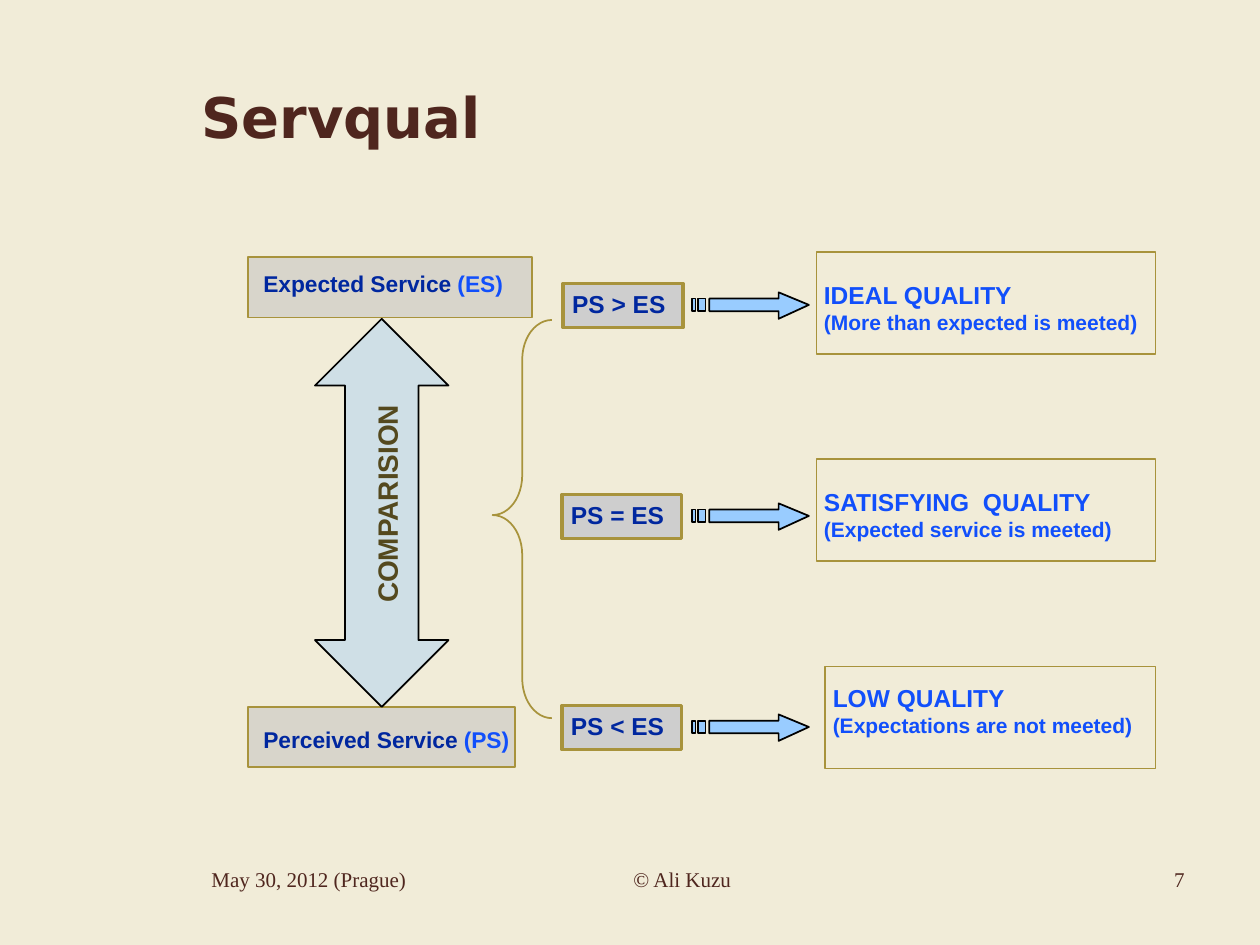
from lxml.etree import SubElement
from pptx import Presentation
from pptx.dml.color import RGBColor
from pptx.enum.shapes import MSO_SHAPE as Preset
from pptx.enum.text import MSO_ANCHOR as Anchor, PP_ALIGN as Align
from pptx.oxml.ns import qn
from pptx.util import Inches, Pt

COLORS = {
    "background": "F1ECD8",
    "brown": "4F261E",
    "olive": "54491E",
    "gold": "A8933C",
    "navy": "00279F",
    "blue": "114FFB",
    "silver": "C0C0C0",
    "gray": "CECECE",
    "sky": "99CCFF",
    "black": "000000",
}
FOOTER = {"name": "Times New Roman", "size": 12, "color": "brown"}
TITLE = {"name": "DejaVu Sans", "size": 32, "bold": True, "color": "brown"}
SERVICE = {"name": "Arial", "size": 13, "bold": True, "color": "navy"}
ABBREVIATION = {**SERVICE, "color": "blue"}
COMPARISON = {**SERVICE, "size": 16, "color": "olive"}
CONDITION = {**SERVICE, "size": 14}
OUTCOME = {**CONDITION, "color": "blue"}
DETAIL = {**OUTCOME, "size": 12}

DEFAULT_INSETS = (0.1, 0.05, 0.1, 0.05)
TIGHT_INSETS = (0.06, 0.03, 0.06, 0.03)
CONDITION_INSETS = (0.07, 0.04, 0.07, 0.04)

# Contours of a striped arrow, relative to its top left corner
ARROW_CONTOURS = [
    [(0.69, 0), (0.69, 0.05), (0.14, 0.05), (0.14, 0.15),
     (0.69, 0.15), (0.69, 0.21), (0.93, 0.1)],
    [(0.05, 0.05), (0.05, 0.15), (0.11, 0.15), (0.11, 0.05)],
    [(0, 0.05), (0, 0.15), (0.03, 0.15), (0.03, 0.05)],
]


def rgb(color):
    return RGBColor.from_string(COLORS[color])


class SlideBuilder:
    def __init__(self, slide):
        self.slide = slide
        slide.background.fill.solid()
        slide.background.fill.fore_color.rgb = rgb("background")

    def fill_text(self, shape, paragraphs, insets=DEFAULT_INSETS,
                  align=Align.LEFT, anchor=Anchor.TOP):
        """Fill a shape with paragraphs, each a list of (text, format) runs."""
        frame = shape.text_frame
        frame.word_wrap = True
        frame.vertical_anchor = anchor
        for side, inset in zip(("left", "top", "right", "bottom"), insets):
            setattr(frame, f"margin_{side}", Inches(inset))
        for index, runs in enumerate(paragraphs):
            paragraph = frame.add_paragraph() if index else frame.paragraphs[0]
            paragraph.alignment = align
            for text, style in runs:
                run = paragraph.add_run()
                run.text = text
                for attribute, value in style.items():
                    if attribute == "color":
                        run.font.color.rgb = rgb(value)
                    else:
                        setattr(run.font, attribute,
                                Pt(value) if attribute == "size" else value)

    def text(self, box, paragraphs, rotation=0, **layout):
        shape = self.slide.shapes.add_textbox(*map(Inches, box))
        shape.rotation = rotation
        self.fill_text(shape, paragraphs, **layout)

    def paint(self, shape, fill=None, opacity=100, line="gold", width=1):
        shape.shadow.inherit = False
        shape.line.color.rgb = rgb(line)
        shape.line.width = Pt(width)
        if fill is None:
            shape.fill.background()
            return
        shape.fill.solid()
        shape.fill.fore_color.rgb = rgb(fill)
        if opacity < 100:
            properties = shape.element.spPr
            color = properties.find(f"{qn('a:solidFill')}/{qn('a:srgbClr')}")
            SubElement(color, qn("a:alpha")).set("val", str(opacity * 1000))

    def shape(self, preset, box, adjustments=(), **look):
        shape = self.slide.shapes.add_shape(preset, *map(Inches, box))
        for index, value in enumerate(adjustments):
            shape.adjustments[index] = value
        self.paint(shape, **look)
        return shape

    def striped_arrow(self, left, top):
        contours = [[(Inches(left + x), Inches(top + y)) for x, y in contour]
                    for contour in ARROW_CONTOURS]
        builder = self.slide.shapes.build_freeform(*contours[0][0])
        for index, (start, *points) in enumerate(contours):
            if index:
                builder.move_to(*start)
            builder.add_line_segments(points, close=True)
        self.paint(builder.convert_to_shape(), fill="sky", line="black")

    def service(self, box, text_top, name, abbreviation):
        self.shape(Preset.RECTANGLE, box, fill="silver", opacity=50)
        self.text((2.03, text_top, 2.19, 0.37),
                  [[(name, SERVICE), (abbreviation, ABBREVIATION)]],
                  insets=TIGHT_INSETS)

    def condition(self, left, top, text):
        shape = self.shape(Preset.RECTANGLE, (left, top, 0.95, 0.35),
                           fill="gray", width=2)
        self.fill_text(shape, [[(text, CONDITION)]], insets=CONDITION_INSETS)

    def outcome(self, left, top, text_offset, heading, detail):
        width = 9.17 - left
        self.shape(Preset.RECTANGLE, (left, top, width, 0.81))
        self.text((left, top + text_offset, width - 0.06, 0.62),
                  [[(heading, OUTCOME)], [(detail, DETAIL)]],
                  insets=TIGHT_INSETS)


def main():
    presentation = Presentation()
    presentation.slide_width = Inches(10)
    presentation.slide_height = Inches(7.5)
    builder = SlideBuilder(
        presentation.slides.add_slide(presentation.slide_layouts[6]))

    builder.text((1.5, 0.3, 8, 1.25), [[("Servqual", TITLE)]],
                 anchor=Anchor.MIDDLE)

    builder.service((1.97, 2.04, 2.25, 0.48), 2.11, "Expected Service ", "(ES)")
    builder.service((1.97, 5.61, 2.12, 0.48), 5.73, "Perceived Service ", "(PS)")
    builder.shape(Preset.UP_DOWN_ARROW, (2.5, 2.53, 1.06, 3.08), (0.5, 0.55),
                  fill="sky", opacity=38, line="black")
    builder.text((1.63, 3.9, 2.85, 0.3), [[("COMPARISION", COMPARISON)]],
                 rotation=270, insets=(0.69, 0.03, 0.06, 0.03))
    builder.shape(Preset.LEFT_BRACE, (3.91, 2.54, 0.47, 3.16), (0.67, 0.49))

    cases = [
        (4.47, "PS > ES", 6.48, 0.19,
         "IDEAL QUALITY", "(More than expected is meeted)"),
        (4.46, "PS = ES", 6.48, 0.19,
         "SATISFYING  QUALITY", "(Expected service is meeted)"),
        (4.46, "PS < ES", 6.55, 0.1,
         "LOW QUALITY", "(Expectations are not meeted)"),
    ]
    for row, (left, condition, *outcome) in enumerate(cases):
        outcome_left, text_offset, heading, detail = outcome
        condition_top = 2.25 + row * 3.35 / 2
        builder.condition(left, condition_top, condition)
        builder.striped_arrow(5.49, condition_top + 0.07)
        builder.outcome(outcome_left, 2 + row * 3.29 / 2, text_offset,
                        heading, detail)

    footers = [
        (1.58, 2.08, "May 30, 2012 (Prague)", Align.LEFT),
        (3.83, 3.17, "© Ali Kuzu", Align.CENTER),
        (7.17, 2.33, "7", Align.RIGHT),
    ]
    for left, width, text, align in footers:
        builder.text((left, 6.83, width, 0.52), [[(text, FOOTER)]], align=align)

    presentation.save("out.pptx")


if __name__ == "__main__":
    main()
